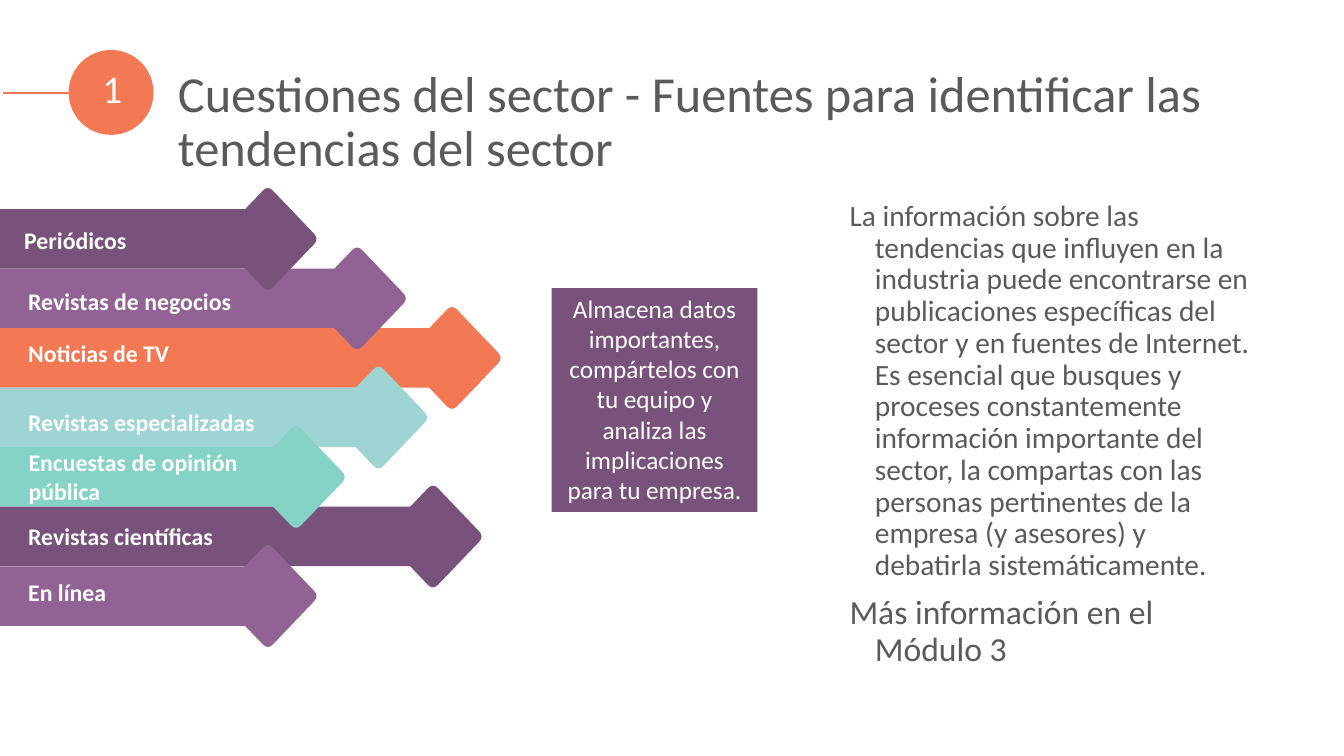
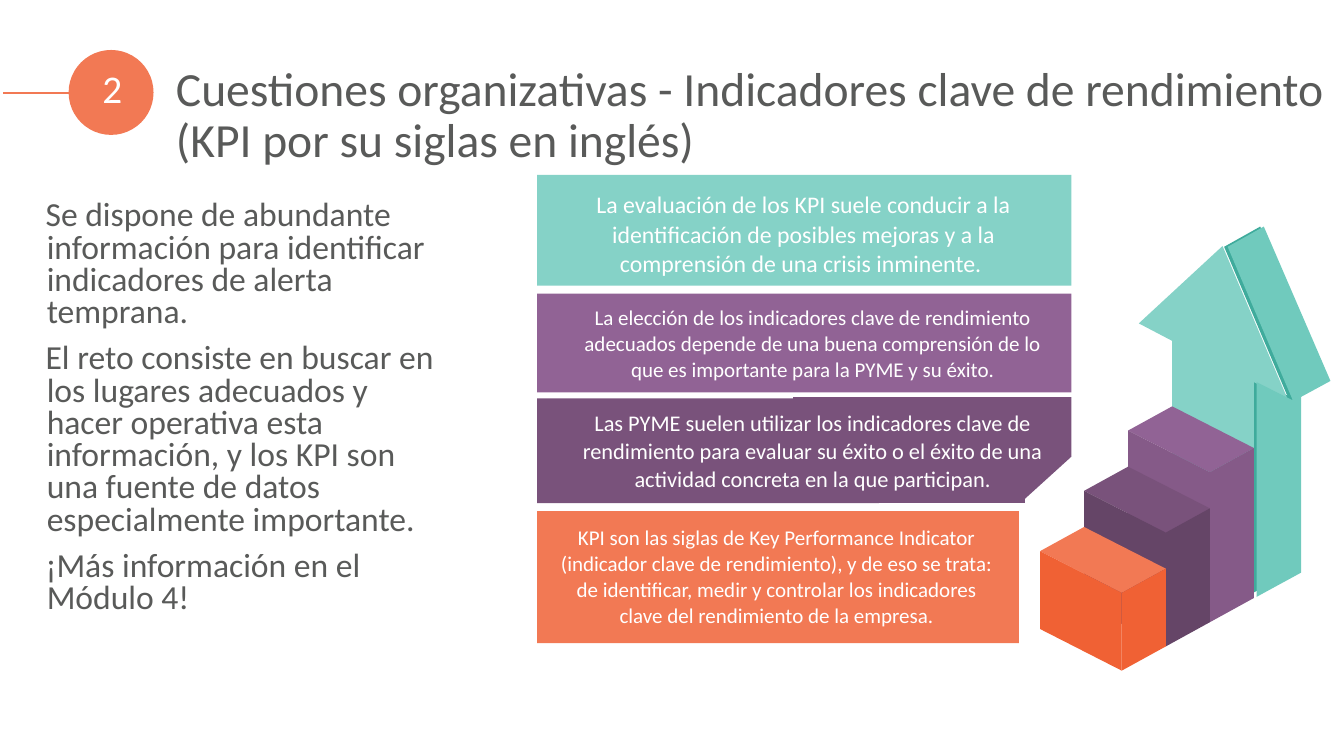
from dataclasses import dataclass

from lxml.etree import SubElement
from pptx import Presentation
from pptx.dml.color import RGBColor
from pptx.enum.shapes import MSO_CONNECTOR, MSO_SHAPE
from pptx.enum.text import MSO_ANCHOR, MSO_AUTO_SIZE, PP_ALIGN
from pptx.oxml.ns import qn
from pptx.util import Cm, Pt

FONT = "Calibri"
WHITE, GREY = "FFFFFF", "595A59"
ORANGE, DEEP_ORANGE = "F27954", "F06134"
PLUM, DEEP_PLUM = "79527B", "654567"
PURPLE, DEEP_PURPLE = "916395", "855A88"
TEAL, MID_TEAL, DEEP_TEAL, SKY = "85D2C7", "70CABD", "3FAB9C", "9ED4D3"

Point = tuple[float, float]


@dataclass(frozen=True)
class Area:
    """A rectangle in centimetres."""
    left: float
    top: float
    width: float
    height: float

    def lengths(self) -> list[Cm]:
        return [Cm(value) for value in (self.left, self.top, self.width, self.height)]


@dataclass(frozen=True)
class Line:
    """One paragraph and its formatting."""
    text: str
    size: float
    color: str = WHITE
    bold: bool = False
    align: PP_ALIGN = PP_ALIGN.LEFT
    spacing: float = 1.0
    before: float = 0
    hanging: float = 0


@dataclass(frozen=True)
class Band:
    label: str
    width: float
    tip: float
    color: str
    label_area: Area


@dataclass(frozen=True)
class Panel:
    text: str
    size: float
    color: str
    area: Area
    text_area: Area


@dataclass(frozen=True)
class Block:
    height: float
    top_color: str
    side_color: str


BANDS = [
    Band("Periódicos", 6.83, 6.75, PLUM, Area(0.36, 5.56, 4.11, 0.99)),
    Band("Revistas de negocios", 9.09, 9.0, PURPLE, Area(0.46, 7.09, 6.32, 0.99)),
    Band("Noticias de TV", 11.23, 11.39, ORANGE, Area(0.46, 8.41, 5.54, 0.99)),
    Band("Revistas especializadas", 9.68, 9.54, SKY, Area(0.46, 10.16, 7.92, 0.99)),
    Band("Encuestas de opinión pública", 7.92, 7.46, TEAL, Area(0.47, 11.16, 6.3, 1.7)),
    Band("Revistas científicas", 10.97, 10.91, PLUM, Area(0.46, 13.03, 5.33, 0.99)),
    Band("En línea", 6.83, 6.75, PURPLE, Area(0.46, 14.43, 3.91, 0.99)),
]
BAND_TOP, BAND_HEIGHT = 5.27, 1.5

PANELS = [
    Panel("La evaluación de los KPI suele conducir a la identificación de posibles "
          "mejoras y a la comprensión de una crisis inminente. ", 17, TEAL,
          Area(13.54, 4.41, 13.46, 2.79), Area(14.0, 4.66, 12.5, 2.87)),
    Panel("La elección de los indicadores clave de rendimiento adecuados depende de "
          "una buena comprensión de lo que es importante para la PYME y su éxito.",
          15, PURPLE, Area(13.54, 7.4, 13.46, 2.49), Area(14.27, 7.55, 12.42, 2.18)),
    Panel("Las PYME suelen utilizar los indicadores clave de rendimiento para evaluar "
          "su éxito o el éxito de una actividad concreta en la que participan.",
          16, PLUM, Area(13.54, 10.04, 8.61, 2.64), Area(14.27, 10.19, 12.42, 2.34)),
    Panel("KPI son las siglas de Key Performance Indicator (indicador clave de "
          "rendimiento), y de eso se trata: de identificar, medir y controlar los "
          "indicadores clave del rendimiento de la empresa.",
          15, ORANGE, Area(13.54, 12.88, 12.14, 3.33), Area(13.87, 13.09, 11.4, 2.87)),
]
CUT_CORNER = [(19.99, 12.67), (19.99, 10.01), (27.0, 10.01), (27.0, 11.51),
              (25.83, 12.57), (25.83, 12.67)]

BLOCKS = [
    Block(1.96, ORANGE, DEEP_ORANGE),
    Block(2.87, PLUM, DEEP_PLUM),
    Block(3.78, PURPLE, DEEP_PURPLE),
]
FIRST_BLOCK, BLOCK_STEP = (26.21, 13.89), (1.11, -1.52)
BLOCK_LENGTH, BLOCK_DEPTH = (2.06, 1.05), (1.11, -0.61)

ARROW_FRONT = [(31.6, 15.04), (31.6, 9.63), (32.46, 10.08), (30.81, 6.2),
               (28.7, 8.15), (29.54, 8.59), (29.54, 14.0)]
ARROW_SHAFT = [(32.79, 14.43), (32.79, 9.96), (32.56, 10.08), (31.67, 9.63), (31.67, 15.04)]
ARROW_HEAD = [(31.85, 5.71), (30.94, 6.22), (32.59, 10.11), (33.53, 9.6)]


def rgb(value: str) -> RGBColor:
    return RGBColor.from_string(value)


def paint(shape, color: str):
    shape.shadow.inherit = False
    shape.fill.solid()
    shape.fill.fore_color.rgb = rgb(color)
    shape.line.fill.background()
    return shape


def write(shape, lines: list[Line], anchor: MSO_ANCHOR = MSO_ANCHOR.TOP):
    frame = shape.text_frame
    frame.word_wrap = True
    frame.auto_size = MSO_AUTO_SIZE.NONE
    frame.vertical_anchor = anchor
    for index, line in enumerate(lines):
        paragraph = frame.add_paragraph() if index else frame.paragraphs[0]
        paragraph.text = line.text
        paragraph.alignment = line.align
        paragraph.line_spacing = line.spacing
        paragraph.space_before = Pt(line.before)
        if line.hanging:
            properties = paragraph._p.get_or_add_pPr()
            properties.set("marL", str(Cm(line.hanging)))
            properties.set("indent", str(-Cm(line.hanging)))
        font = paragraph.font
        font.name, font.size, font.bold = FONT, Pt(line.size), line.bold
        font.color.rgb = rgb(line.color)
    return frame


def add_text(page, area: Area, lines: list[Line], anchor: MSO_ANCHOR = MSO_ANCHOR.TOP):
    return write(page.shapes.add_textbox(*area.lengths()), lines, anchor)


def add_preset(page, kind: MSO_SHAPE, area: Area, color: str):
    return paint(page.shapes.add_shape(kind, *area.lengths()), color)


def add_polygon(shapes, points: list[Point], color: str):
    corners = [(Cm(x), Cm(y)) for x, y in points]
    builder = shapes.build_freeform(*corners[0])
    builder.add_line_segments(corners[1:], close=True)
    return paint(builder.convert_to_shape(), color)


def shift(points: list[Point], offset: Point, times: float = 1) -> list[Point]:
    return [(x + offset[0] * times, y + offset[1] * times) for x, y in points]


def add_diamond(page, center: Point, color: str) -> None:
    """Diamond whose corners are rounded with quadratic curves."""
    tips = shift([(1.29, 0), (0, 1.35), (-1.29, 0), (0, -1.35)], center)
    cut = 0.1
    points = []
    for index, tip in enumerate(tips):
        before, after = tips[index - 1], tips[(index + 1) % 4]
        for back, ahead in ((cut, 0), (cut / 4, cut / 4), (0, cut)):
            points.append(tuple(c + back * (b - c) + ahead * (a - c)
                                for b, c, a in zip(before, tip, after)))
    shape = add_polygon(page.shapes, points, color)
    outline = next(shape._element.iter(qn("a:path")))
    segments = list(outline)
    for index, tip in enumerate(tips):
        middle, end = segments[3 * index + 1:3 * index + 3]
        curve = middle.makeelement(qn("a:quadBezTo"))
        SubElement(curve, qn("a:pt"), x=str(Cm(tip[0]) - shape.left),
                   y=str(Cm(tip[1]) - shape.top))
        curve.append(end[0])
        outline.replace(middle, curve)
        outline.remove(end)


def add_page(deck, number: int, title: str, area: Area, size: float):
    page = deck.slides.add_slide(deck.slide_layouts[5])
    heading = page.shapes.title
    heading.left, heading.top, heading.width, heading.height = area.lengths()
    write(heading, [Line(title, size, GREY, spacing=0.9)])
    add_preset(page, MSO_SHAPE.OVAL, Area(1.73, 1.26, 2.14, 2.14), ORANGE)
    add_text(page, Area(2.12, 1.42, 1.42, 1.75),
             [Line(str(number), 28, align=PP_ALIGN.CENTER, spacing=0.9)], MSO_ANCHOR.MIDDLE)
    rule = page.shapes.add_connector(
        MSO_CONNECTOR.STRAIGHT, Cm(0.08), Cm(2.35), Cm(1.73), Cm(2.35))
    rule.line.color.rgb = rgb(ORANGE)
    rule.line.width = Pt(1.5)
    SubElement(rule._element.spPr, qn("a:effectLst"))
    return page


def add_bands(page) -> None:
    tops = [BAND_TOP + index * BAND_HEIGHT for index in range(len(BANDS))]
    for band, top in zip(BANDS, tops):
        add_preset(page, MSO_SHAPE.RECTANGLE, Area(0, top, band.width, BAND_HEIGHT), band.color)
    for band, top in zip(BANDS, tops):
        add_diamond(page, (band.tip, top + BAND_HEIGHT / 2), band.color)
    for band in BANDS:
        add_text(page, band.label_area, [Line(band.label, 17, bold=True)])


def add_panel(page, panel: Panel) -> None:
    add_preset(page, MSO_SHAPE.RECTANGLE, panel.area, panel.color)
    frame = add_text(page, panel.text_area, [
        Line(panel.text, panel.size, align=PP_ALIGN.CENTER, spacing=1.03)])
    frame.margin_left = frame.margin_right = Cm(0.23)
    frame.margin_top = frame.margin_bottom = Cm(0.11)


def add_block(shapes, block: Block, left_corner: Point) -> None:
    left = [left_corner]
    front = shift(left, BLOCK_LENGTH)
    right = shift(front, BLOCK_DEPTH)
    back = shift(left, BLOCK_DEPTH)
    down = (0, block.height)
    add_polygon(shapes, left + back + right + front, block.top_color)
    for near, far in ((left, front), (front, right)):
        add_polygon(shapes, near + far + shift(far, down) + shift(near, down),
                    block.side_color)


def add_growth_arrow(page) -> None:
    shapes = page.shapes.add_group_shape().shapes
    add_polygon(shapes, shift(ARROW_SHAFT, (-0.09, -0.1)), DEEP_TEAL)
    add_polygon(shapes, shift(ARROW_HEAD, (-0.09, 0)), DEEP_TEAL)
    add_polygon(shapes, ARROW_FRONT, TEAL)
    for index, block in reversed(list(enumerate(BLOCKS))):
        add_block(shapes, block, shift([FIRST_BLOCK], BLOCK_STEP, index)[0])
    add_polygon(shapes, ARROW_SHAFT, MID_TEAL)
    add_polygon(shapes, ARROW_HEAD, MID_TEAL)


def build_sources_page(deck) -> None:
    page = add_page(
        deck, 1, "Cuestiones del sector - Fuentes para identificar las tendencias del sector",
        Area(4.23, 1.6, 28.7, 1.57), 36)
    add_text(page, Area(21.16, 4.94, 10.64, 12.22), [
        Line("La información sobre las tendencias que influyen en la industria puede "
             "encontrarse en publicaciones específicas del sector y en fuentes de Internet. "
             "Es esencial que busques y proceses constantemente información importante del "
             "sector, la compartas con las personas pertinentes de la empresa (y asesores) "
             "y debatirla sistemáticamente.", 21, GREY, spacing=0.9, hanging=0.64),
        Line("Más información en el Módulo 3", 24, GREY, spacing=0.9, before=10, hanging=0.64),
    ])
    add_bands(page)
    callout = add_preset(page, MSO_SHAPE.RECTANGLE, Area(13.9, 7.26, 5.19, 5.64), PLUM)
    write(callout, [Line("Almacena datos importantes, compártelos con tu equipo y analiza las "
                         "implicaciones para tu empresa.", 18, align=PP_ALIGN.CENTER)])


def build_indicators_page(deck) -> None:
    page = add_page(
        deck, 2, "Cuestiones organizativas - Indicadores clave de rendimiento "
        "(KPI por su siglas en inglés)", Area(4.18, 1.51, 29.54, 1.57), 34)
    texts = [
        "Se dispone de abundante información para identificar indicadores de alerta temprana.",
        "El reto consiste en buscar en los lugares adecuados y hacer operativa esta "
        "información, y los KPI son una fuente de datos especialmente importante.",
        "¡Más información en el Módulo 4!",
    ]
    add_text(page, Area(0.9, 4.94, 10.34, 11.48), [
        Line(text, 24, GREY, spacing=0.8, before=10 if index else 0, hanging=0.03)
        for index, text in enumerate(texts)])
    add_polygon(page.shapes, CUT_CORNER, PLUM)
    for panel in PANELS:
        add_panel(page, panel)
    add_growth_arrow(page)


def main() -> None:
    deck = Presentation()
    deck.slide_width, deck.slide_height = Cm(33.87), Cm(19.05)
    build_sources_page(deck)
    build_indicators_page(deck)
    deck.save("out.pptx")


if __name__ == "__main__":
    main()
